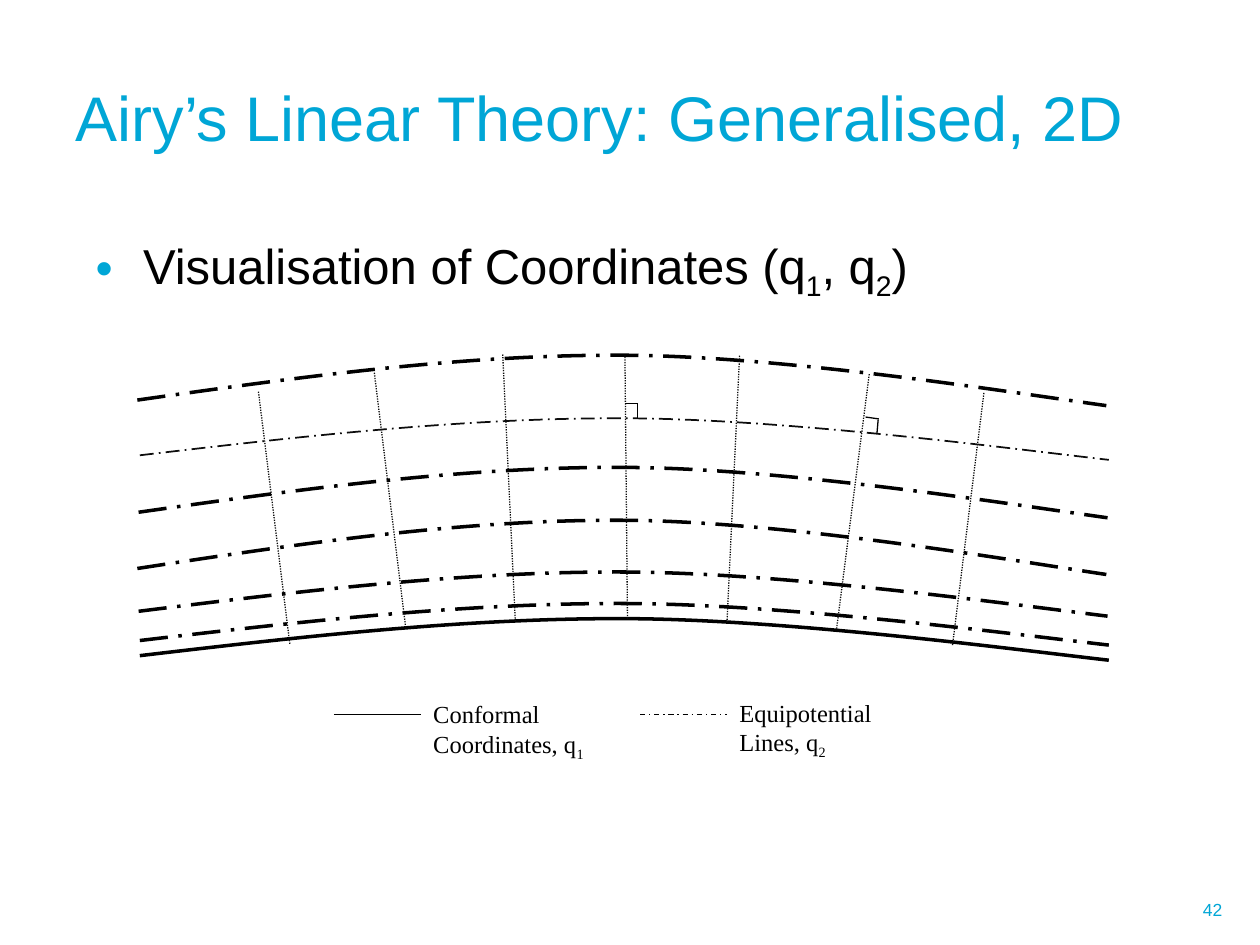
from lxml.etree import SubElement
from pptx import Presentation
from pptx.dml.color import RGBColor
from pptx.enum.dml import MSO_LINE
from pptx.enum.shapes import MSO_CONNECTOR
from pptx.enum.text import MSO_ANCHOR, MSO_AUTO_SIZE, PP_ALIGN
from pptx.oxml.ns import qn
from pptx.util import Inches, Pt

BLACK = RGBColor(0x00, 0x00, 0x00)
DARK = RGBColor(0x0D, 0x0D, 0x0D)
CYAN = RGBColor(0x00, 0xA6, 0xD6)

deck = Presentation()
deck.slide_width, deck.slide_height = Inches(10), Inches(7.5)
CELL = deck.slide_width // 100  # the slide is 100 columns by 75 rows
slide = deck.slides.add_slide(deck.slide_layouts[1])
shapes = slide.shapes


def write(box, place, *parts, size, font="Arial", color=BLACK,
          align=PP_ALIGN.LEFT, anchor=MSO_ANCHOR.TOP):
    """Place a box on the grid and fill it; every second part is a subscript."""
    box.left, box.top, box.width, box.height = (round(n * CELL) for n in place)
    frame = box.text_frame
    frame.word_wrap = True
    frame.auto_size = MSO_AUTO_SIZE.NONE
    frame.vertical_anchor = anchor
    para = frame.paragraphs[0]
    para.alignment = align
    para.space_before = Pt(0)
    for i, part in enumerate(parts):
        run = para.add_run()
        run.text = part
        run.font.name, run.font.size = font, Pt(size)
        run.font.color.rgb = color
        if i % 2:
            run.font._element.set("baseline", "-25000")
    return para


def ink(line, width, color, dash):
    line.color.rgb = color
    line.width = Pt(width)
    if dash:
        line.dash_style = dash


# Title, list and page number
write(shapes.title, (5, 3, 91.4, 12.5), "Airy’s Linear Theory: Generalised, 2D",
      size=36, color=CYAN, anchor=MSO_ANCHOR.MIDDLE)
para = write(slide.placeholders[1], (6.6, 18.2, 91.4, 46.2),
             "Visualisation of Coordinates (q", "1", ", q", "2", ")", size=28)
props = para._p.get_or_add_pPr()
props.set("marL", str(round(3.75 * CELL)))
props.set("indent", str(round(-3.75 * CELL)))
tint = SubElement(props, qn("a:buClr"))
SubElement(tint, qn("a:srgbClr"), val=str(CYAN))
SubElement(props, qn("a:buFont"), typeface="Arial")
SubElement(props, qn("a:buChar"), char="•")
write(shapes.add_textbox(0, 0, 0, 0), (72.7, 70.2, 25.3, 4), "42",
      size=10, color=CYAN, align=PP_ALIGN.RIGHT, anchor=MSO_ANCHOR.MIDDLE)

# Curves: one arch of two Bezier spans, stretched to each level's height
ARCH = [(0, 0.89), (12.9, 0.43), (25.9, -0.02), (38.7, 0),
        (51.5, 0.02), (69.1, 0.73), (76.9, 1)]
LONG = MSO_LINE.LONG_DASH_DOT
levels = [  # left, top, height, line width, colour, dash
    (11.1, 49.1, 3.3, 2, BLACK, None),
    (11.1, 33.2, 3.3, 1, DARK, LONG),
    (11.1, 47.9, 3.3, 2, BLACK, LONG),
    (11, 45.4, 3.5, 2, BLACK, LONG),
    (10.9, 41.3, 4.3, 2, BLACK, LONG),
    (11, 37.1, 4, 2, BLACK, LONG),
    (10.9, 28.2, 4, 2, BLACK, LONG),
]
for left, top, height, width, color, dash in levels:
    dots = [(round((left + x) * CELL), round((top + y * height) * CELL))
            for x, y in ARCH]
    pen = shapes.build_freeform(*dots[0])
    pen.add_line_segments(dots[1:], close=False)
    curve = pen.convert_to_shape()
    curve.shadow.inherit = False
    curve.fill.background()
    ink(curve.line, width, color, dash)
    # Each three straight steps become one Bezier span
    route = next(curve._element.iter(qn("a:path")))
    steps = route.findall(qn("a:lnTo"))
    for first in (0, 3):
        span = SubElement(route, qn("a:cubicBezTo"))
        for step in steps[first:first + 3]:
            span.append(step[0])
            route.remove(step)

# Straight lines: dotted rays, right-angle marks and legend keys
rays = [(49.8, 49.1, 49.6, 28.2), (57.7, 49.4, 58.7, 28.2),
        (66.4, 49.9, 69, 29.6), (75.6, 51.2, 78.1, 31.1),
        (40.9, 49.3, 39.9, 28.1), (32.2, 49.8, 29.7, 29.5),
        (23, 51.1, 20.5, 31)]
marks = [(50.6, 32, 49.6, 32), (50.6, 33.2, 50.6, 32.1),
         (69.75, 33.25, 68.7, 33.1), (69.6, 34.4, 69.7, 33.3)]
groups = [
    (rays, DARK, MSO_LINE.ROUND_DOT),
    (marks + [(26.5, 56.7, 33.4, 56.7)], BLACK, None),
    ([(50.8, 56.7, 57.7, 56.7)], BLACK, MSO_LINE.DASH_DOT),
]
for lines, color, dash in groups:
    for ends in lines:
        link = shapes.add_connector(MSO_CONNECTOR.STRAIGHT,
                                    *(round(n * CELL) for n in ends))
        ink(link.line, 0.75, color, dash)
        SubElement(link._element.spPr, qn("a:effectLst"))

# Legend labels
for left, top, label, sub in ((33.4, 55, "Conformal Coordinates, q", "1"),
                              (57.7, 54.9, "Equipotential Lines, q", "2")):
    write(shapes.add_textbox(0, 0, 0, 0), (left, top, 15, 5.7), label, sub,
          size=14, font="Times New Roman")

deck.save("out.pptx")
